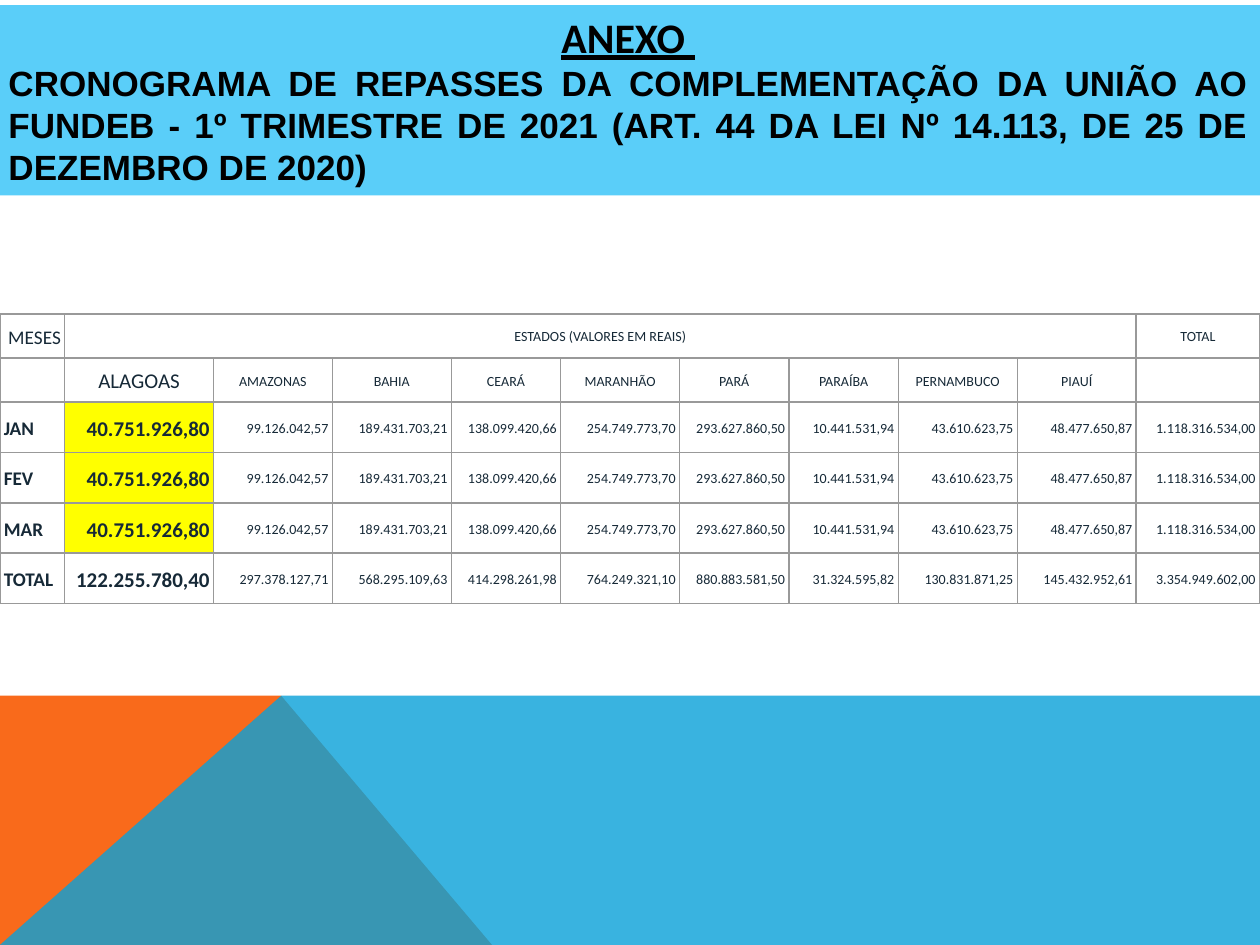
from lxml.etree import SubElement
from pptx import Presentation
from pptx.dml.color import RGBColor
from pptx.enum.text import MSO_ANCHOR, MSO_AUTO_SIZE, PP_ALIGN as Align
from pptx.oxml.ns import qn
from pptx.util import Pt

ORANGE = RGBColor(0xF9, 0x6A, 0x1B)
BLUE = RGBColor(0x08, 0xA1, 0xD9)
SKY = RGBColor(0x5A, 0xCE, 0xF9)
YELLOW = RGBColor(0xFF, 0xFF, 0x00)
WHITE = RGBColor(0xFF, 0xFF, 0xFF)
BLACK = RGBColor(0x00, 0x00, 0x00)
NAVY = RGBColor(0x16, 0x29, 0x37)
GRAY = RGBColor(0x99, 0x99, 0x99)

WIDTH, HEIGHT = 720, 540
CELL_MARGIN = Pt(2.16)
TABLE_TOP = 179.3
COLUMN_WIDTHS = [37, 85, 68, 68, 62.5, 68, 62.5, 62.5, 68, 68, 70.5]
ROW_HEIGHTS = [25.2] * 2 + [28.8] * 4

STATES = ["ALAGOAS", "AMAZONAS", "BAHIA", "CEARÁ", "MARANHÃO", "PARÁ",
          "PARAÍBA", "PERNAMBUCO", "PIAUÍ"]
MONTHLY = ["40.751.926,80", "99.126.042,57", "189.431.703,21", "138.099.420,66",
           "254.749.773,70", "293.627.860,50", "10.441.531,94", "43.610.623,75",
           "48.477.650,87", "1.118.316.534,00"]
QUARTERLY = ["122.255.780,40", "297.378.127,71", "568.295.109,63", "414.298.261,98",
             "764.249.321,10", "880.883.581,50", "31.324.595,82", "130.831.871,25",
             "145.432.952,61", "3.354.949.602,00"]
ROWS = [
    ["MESES", "ESTADOS (VALORES EM REAIS)"] + [""] * 8 + ["TOTAL"],
    [""] + STATES + [""],
    *[[month] + MONTHLY for month in ("JAN", "FEV", "MAR")],
    ["TOTAL"] + QUARTERLY,
]


def add_polygon(slide, points, color):
    builder = slide.shapes.build_freeform(Pt(points[0][0]), Pt(points[0][1]))
    builder.add_line_segments([(Pt(x), Pt(y)) for x, y in points[1:]], close=True)
    polygon = builder.convert_to_shape()
    polygon.shadow.inherit = False
    polygon.fill.solid()
    polygon.fill.fore_color.rgb = color
    polygon.line.fill.background()
    return polygon


def style_cell(cell, color):
    """Set the fill, the margins and a 1 pt gray border on all four sides."""
    cell.margin_left = cell.margin_right = CELL_MARGIN
    cell.margin_top = cell.margin_bottom = CELL_MARGIN
    cell.vertical_anchor = MSO_ANCHOR.MIDDLE
    properties = cell._tc.get_or_add_tcPr()
    for side in ("a:lnL", "a:lnR", "a:lnT", "a:lnB"):
        border = SubElement(properties, qn(side), w=str(Pt(1)))
        border_fill = SubElement(border, qn("a:solidFill"))
        SubElement(border_fill, qn("a:srgbClr"), val=str(GRAY))
    cell.fill.solid()
    cell.fill.fore_color.rgb = color


prs = Presentation()
prs.slide_width, prs.slide_height = Pt(WIDTH), Pt(HEIGHT)
slide = prs.slides.add_slide(prs.slide_layouts[6])

# Footer
band_top, peak_x = 397.6, 160.7
add_polygon(slide, [(0, HEIGHT), (0, band_top), (peak_x, band_top), (281.2, HEIGHT)],
            ORANGE)
band = add_polygon(slide, [(0, HEIGHT), (peak_x, band_top), (WIDTH, band_top),
                           (WIDTH, HEIGHT)], BLUE)
band_color = band._element.spPr.find(qn("a:solidFill")).find(qn("a:srgbClr"))
SubElement(band_color, qn("a:alpha"), val="80000")

# Transfer schedule
schedule = slide.shapes.add_table(len(ROWS), len(COLUMN_WIDTHS), 0, Pt(TABLE_TOP),
                                  Pt(WIDTH), Pt(sum(ROW_HEIGHTS))).table
schedule.first_row = schedule.horz_banding = False
for column, width in zip(schedule.columns, COLUMN_WIDTHS):
    column.width = Pt(width)
for row, height in zip(schedule.rows, ROW_HEIGHTS):
    row.height = Pt(height)
schedule.cell(0, 1).merge(schedule.cell(0, 9))

for r, values in enumerate(ROWS):
    for c, value in enumerate(values):
        cell = schedule.cell(r, c)
        is_month_value = c == 1 and 2 <= r <= 4
        style_cell(cell, YELLOW if is_month_value else WHITE)
        paragraph = cell.text_frame.paragraphs[0]
        if not value:
            paragraph._p.get_or_add_endParaRPr().set("sz", "800")
            continue
        paragraph.text = value
        paragraph.line_spacing = 1.15
        if c == 0:
            paragraph.alignment = Align.RIGHT if r == 0 else Align.LEFT
        else:
            paragraph.alignment = Align.CENTER if r < 2 else Align.RIGHT
        font = paragraph.runs[0].font
        font.name = "Calibri"
        font.color.rgb = NAVY
        font.bold = r >= 2 and c < 2
        if c == 0:
            font.size = Pt(11)
        else:
            font.size = Pt(12 if c == 1 and r > 0 else 8)

# Title
title = slide.shapes.add_textbox(Pt(-2.2), Pt(2.9), Pt(722.2), Pt(108.7))
title.fill.solid()
title.fill.fore_color.rgb = SKY
title_frame = title.text_frame
title_frame.word_wrap = True
title_frame.auto_size = MSO_AUTO_SIZE.SHAPE_TO_FIT_TEXT
title_frame.text = (
    "ANEXO \n"
    "CRONOGRAMA DE REPASSES DA COMPLEMENTAÇÃO DA UNIÃO AO FUNDEB - 1º TRIMESTRE "
    "DE 2021 (ART. 44 DA LEI Nº 14.113, DE 25 DE DEZEMBRO DE 2020)"
)
title_styles = [(Align.CENTER, "Calibri", 24, True), (Align.JUSTIFY, "Arial", 20, False)]
for paragraph, (alignment, typeface, size, underline) in zip(title_frame.paragraphs,
                                                           title_styles):
    paragraph.alignment = alignment
    font = paragraph.runs[0].font
    font.name, font.size = typeface, Pt(size)
    font.bold, font.underline = True, underline
    font.color.rgb = BLACK

prs.save("out.pptx")
